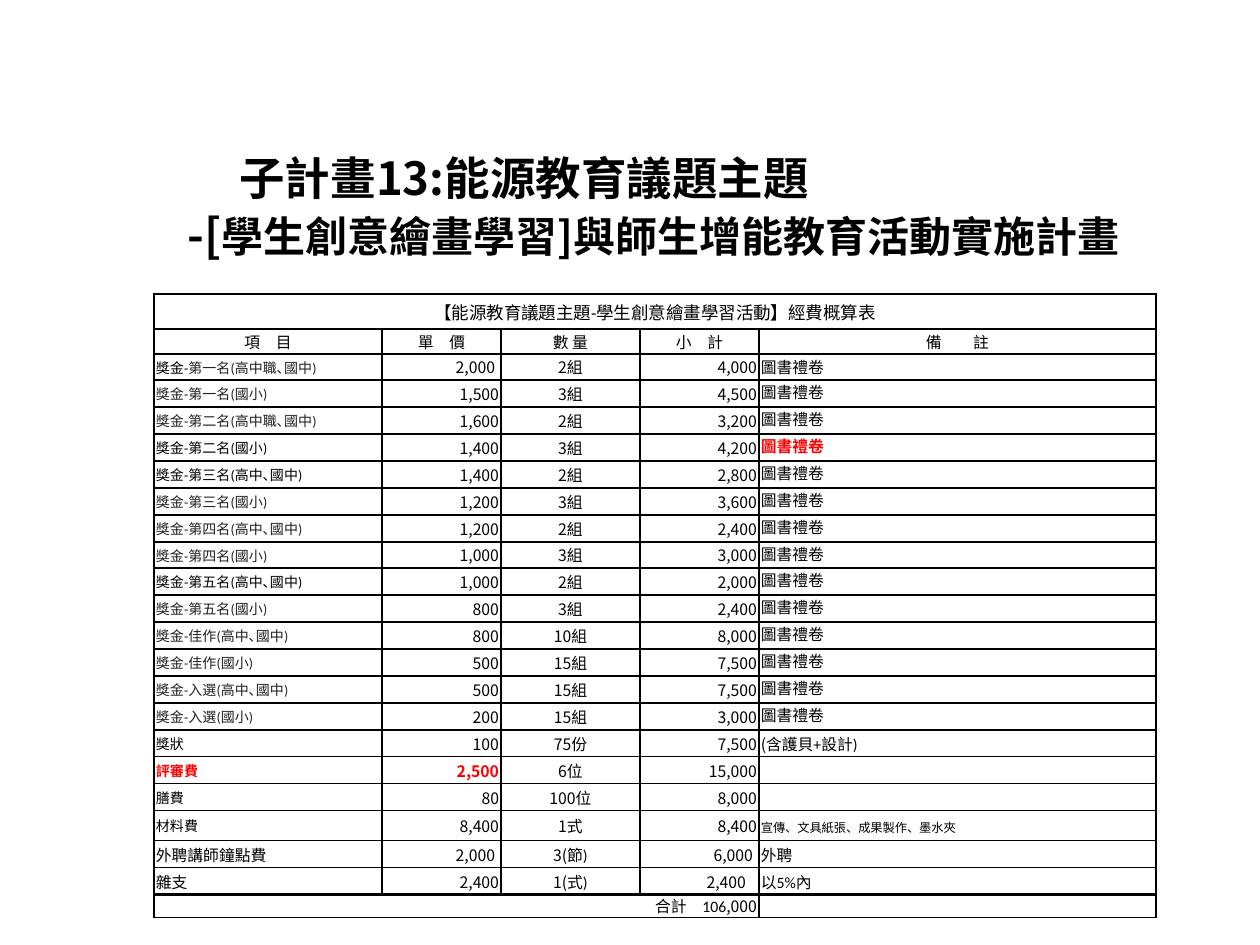
from lxml.etree import SubElement
from pptx import Presentation
from pptx.dml.color import RGBColor
from pptx.enum.text import MSO_ANCHOR, PP_ALIGN
from pptx.oxml.ns import qn
from pptx.util import Pt

PX = 914400 // 126
COLORS = {"black": "000000", "gray": "212121", "red": "FF0000"}
LATIN, SANS, JAPANESE = "Calibri", "Noto Sans CJK SC", "Noto Sans CJK JP"
COLUMN_WIDTHS = [228, 119, 139, 119, 397]
ROW_HEIGHTS = [35, 25, 26] + [27] * 6 + [26] + [27] * 9 + [30, 27, 27, 23]
ALIGNMENTS = [PP_ALIGN.JUSTIFY, PP_ALIGN.RIGHT, PP_ALIGN.CENTER, PP_ALIGN.RIGHT, PP_ALIGN.LEFT]
GIFT = "圖書禮卷"

budget = [
    ("獎金-第一名(高中職､國中)", "2,000", "2", "組", "4,000", GIFT),
    ("獎金-第一名(國小)", "1,500", "3", "組", "4,500", GIFT),
    ("獎金-第二名(高中職､國中)", "1,600", "2", "組", "3,200", GIFT),
    ("獎金-第二名(國小)", "1,400", "3", "組", "4,200", GIFT),
    ("獎金-第三名(高中､國中)", "1,400", "2", "組", "2,800", GIFT),
    ("獎金-第三名(國小)", "1,200", "3", "組", "3,600", GIFT),
    ("獎金-第四名(高中､國中)", "1,200", "2", "組", "2,400", GIFT),
    ("獎金-第四名(國小)", "1,000", "3", "組", "3,000", GIFT),
    ("獎金-第五名(高中､國中)", "1,000", "2", "組", "2,000", GIFT),
    ("獎金-第五名(國小)", "800", "3", "組", "2,400", GIFT),
    ("獎金-佳作(高中､國中)", "800", "10", "組", "8,000", GIFT),
    ("獎金-佳作(國小)", "500", "15", "組", "7,500", GIFT),
    ("獎金-入選(高中､國中)", "500", "15", "組", "7,500", GIFT),
    ("獎金-入選(國小)", "200", "15", "組", "3,000", GIFT),
    ("獎狀", "100", "75", "份", "7,500", "(含護貝+設計)"),
    ("評審費", "2,500", "6", "位", "15,000", ""),
    ("膳費", "80", "100", "位", "8,000", ""),
    ("材料費", "8,400", "1", "式", "8,400", "宣傳、文具紙張、成果製作、墨水夾"),
    ("外聘講師鐘點費", "2,000", "3(", "節)", "6,000", "外聘"),
    ("雜支", "2,400", "1(", "式)", "2,400", "以5%內"),
]
black_prizes = {"獎金-第二名(國小)", "獎金-第三名(高中､國中)", "獎金-第五名(高中､國中)"}
red_cells = {(5, 4), (17, 0), (17, 1)}


def write(paragraph, pieces, size, alignment, color="black", bold=False):
    paragraph.alignment = alignment
    paragraph.font.size = Pt(size)
    paragraph.font.bold = bold
    paragraph.font.color.rgb = RGBColor.from_string(COLORS[color])
    fonts = {font for text, font in pieces}
    if len(fonts) == 1:
        paragraph.font.name = pieces[0][1]
    defaults = paragraph._p.pPr.find(qn("a:defRPr"))
    SubElement(defaults, qn("a:ea")).set("typeface", SANS)
    for text, font in pieces:
        run = paragraph.add_run()
        run.text = text
        if len(fonts) > 1:
            run.font.name = font


def draw_borders(cell, top, bottom):
    properties = cell._tc.get_or_add_tcPr()
    for side, width in (("L", 1), ("R", 1), ("T", top), ("B", bottom)):
        line = SubElement(properties, qn(f"a:ln{side}"), w=str(Pt(width)))
        fill = SubElement(line, qn("a:solidFill"))
        SubElement(fill, qn("a:srgbClr"), val=COLORS["black"])


presentation = Presentation()
presentation.slide_width = 1260 * PX
presentation.slide_height = 945 * PX
slide = presentation.slides.add_slide(presentation.slide_layouts[6])

title = slide.shapes.add_textbox(133 * PX, 142 * PX, 1150 * PX, 130 * PX)
frame = title.text_frame
frame.word_wrap = True
title_lines = [
    (94, [("子計畫13:能源教育議題主題", SANS)]),
    (42, [("-", SANS), ("[", JAPANESE), ("學生創意繪畫學習", SANS), ("]", JAPANESE),
          ("與師生增能教育活動實施計畫", SANS)]),
]
for index, (indent, pieces) in enumerate(title_lines):
    paragraph = frame.add_paragraph() if index else frame.paragraphs[0]
    paragraph.line_spacing = Pt(32.5)
    write(paragraph, pieces, 26, PP_ALIGN.LEFT, bold=True)
    paragraph._p.pPr.set("marL", str(indent * PX))
    for run in paragraph.runs[2:]:
        run.font.size = Pt(24)

table = slide.shapes.add_table(
    len(ROW_HEIGHTS), len(COLUMN_WIDTHS), 154 * PX, 294 * PX,
    sum(COLUMN_WIDTHS) * PX, sum(ROW_HEIGHTS) * PX).table
table.first_row = False
table.horz_banding = False
for column, width in zip(table.columns, COLUMN_WIDTHS):
    column.width = width * PX
for row, height in zip(table.rows, ROW_HEIGHTS):
    row.height = height * PX

last = len(ROW_HEIGHTS) - 1
for row in range(last + 1):
    for column in range(len(COLUMN_WIDTHS)):
        cell = table.cell(row, column)
        cell.margin_left = cell.margin_right = 2 * PX
        cell.margin_top = cell.margin_bottom = 0
        cell.vertical_anchor = MSO_ANCHOR.MIDDLE
        draw_borders(cell, 2.25 if row == last else 1, 2.25 if row == last - 1 else 1)
        cell.fill.background()

table.cell(0, 0).merge(table.cell(0, 4))
caption = table.cell(0, 0).text_frame.paragraphs[0]
write(caption, [("【能源教育議題主題-學生創意繪畫學習活動", LATIN), ("】", LATIN), ("經費概算表", LATIN)],
      10, PP_ALIGN.CENTER)
caption.runs[1].font.bold = True

headings = [["項　目"], ["單　價"], ["數 量"], ["小　計"], ["備", "　", "註"]]
for column, heading in enumerate(headings):
    paragraph = table.cell(1, column).text_frame.paragraphs[0]
    write(paragraph, [(text, LATIN) for text in heading], 9, PP_ALIGN.CENTER)
paragraph.runs[1]._r.get_or_add_rPr().set("spc", "900")

for row, (item, price, count, unit, subtotal, remark) in enumerate(budget, 2):
    is_prize = item.startswith("獎金")
    item_pieces = [("獎金-", LATIN), (item[3:], LATIN)] if row == 2 else [(item, LATIN)]
    remark_pieces = [("(", SANS), (remark[1:], LATIN)] if remark.startswith("(") else [(remark, LATIN)]
    contents = [item_pieces, [(price, SANS)], [(count, SANS), (unit, LATIN)], [(subtotal, SANS)]]
    if remark:
        contents.append(remark_pieces)
    sizes = [8 if row < 20 else 9, 9, 9, 9, 7 if row == 19 else 9]
    for column, pieces in enumerate(contents):
        is_red = (row, column) in red_cells
        is_gray = column == 0 and is_prize and row > 2 and item not in black_prizes
        color = "red" if is_red else "gray" if is_gray else "black"
        write(table.cell(row, column).text_frame.paragraphs[0], pieces, sizes[column],
              ALIGNMENTS[column], color, is_red)
    if is_prize and row > 2:
        table.cell(row, 4).vertical_anchor = MSO_ANCHOR.TOP

first_prize = table.cell(2, 0).text_frame.paragraphs[0].runs[1]
first_prize.font.color.rgb = RGBColor.from_string(COLORS["gray"])
table.cell(19, 4).text_frame.paragraphs[0].line_spacing = Pt(12)
for row, column, margin in ((2, 1, 6), (20, 1, 6), (20, 3, 6), (21, 3, 13)):
    table.cell(row, column).margin_right = margin * PX

table.cell(last, 0).merge(table.cell(last, 3))
write(table.cell(last, 0).text_frame.paragraphs[0], [("合計　106", LATIN), (",000", SANS)],
      9, PP_ALIGN.RIGHT)

for cell in table.iter_cells():
    if not cell.text_frame.text:
        SubElement(cell.text_frame.paragraphs[0]._p, qn("a:endParaRPr"), sz="800")

presentation.save("out.pptx")
